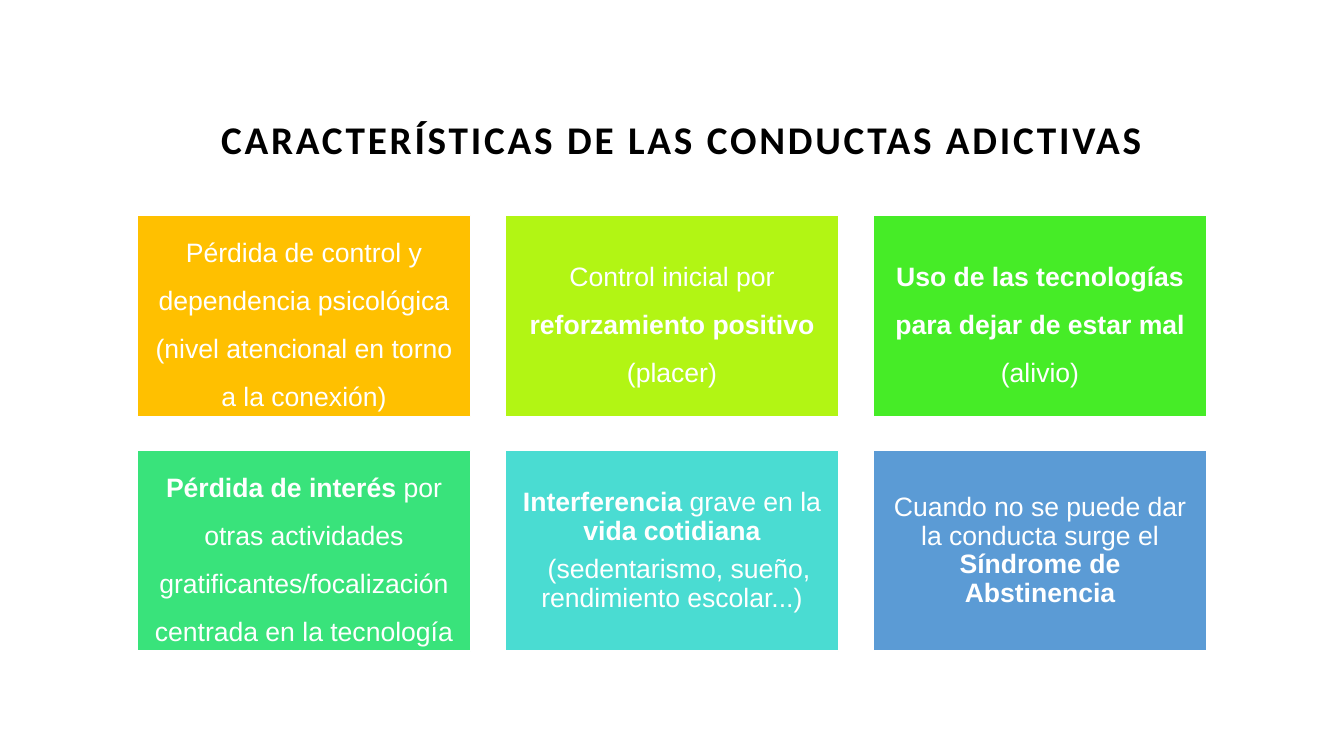
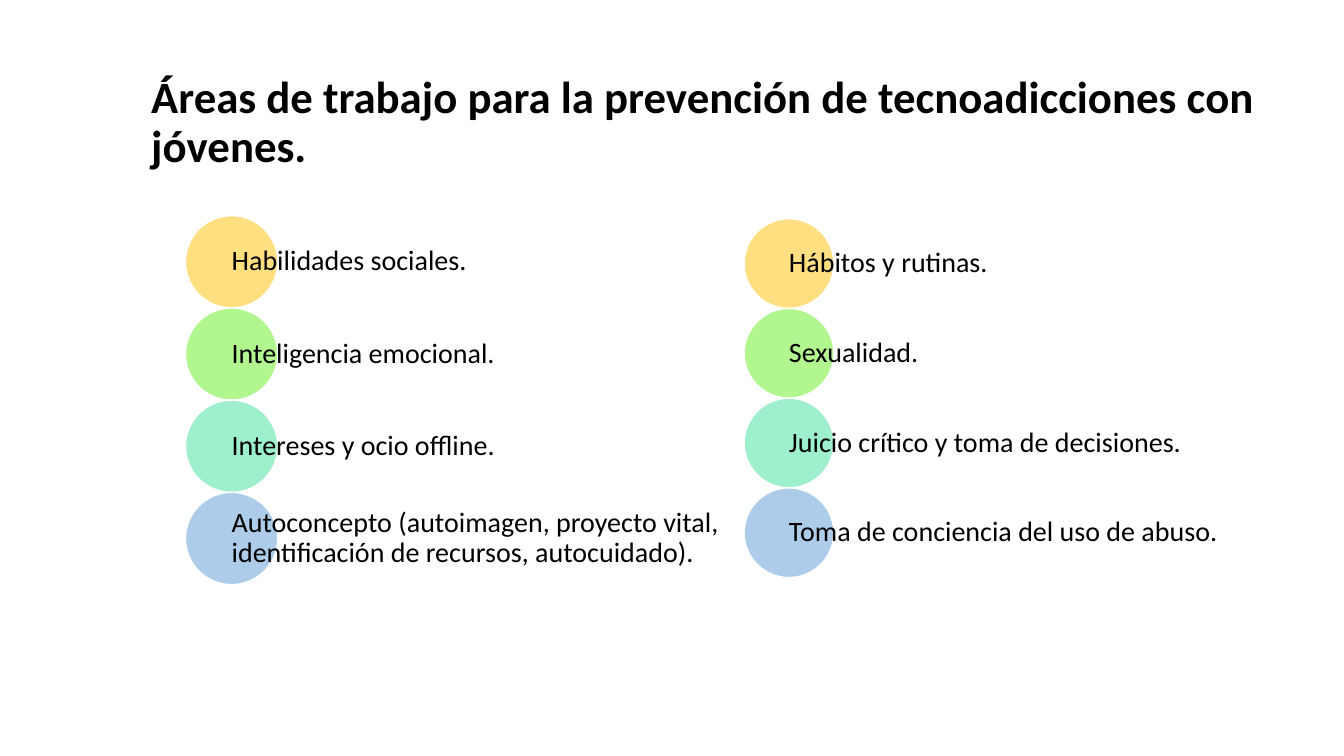
from dataclasses import dataclass

from lxml import etree
from pptx import Presentation
from pptx.dml import color
from pptx.enum import shapes, text
from pptx.oxml import ns
from pptx.util import Inches, Pt

COLORS = {
    "white": "FFFFFF", "black": "000000", "amber": "FFC000", "lime": "B2F514",
    "green": "46EC27", "emerald": "39E37B", "turquoise": "4ADCD2", "blue": "5B9BD5",
    "leaf": "67EF21", "mint": "3FE19B",
}
CENTER, LEFT = text.PP_ALIGN.CENTER, text.PP_ALIGN.LEFT


@dataclass(frozen=True)
class Run:
    words: str
    bold: bool = False


@dataclass(frozen=True)
class Card:
    fill: str
    paragraphs: list[list[Run]]
    spacing: float = 1.5
    last_indent: float = 0


@dataclass(frozen=True)
class AreaColumn:
    left: float
    top: float
    height: float
    label_width: float
    areas: list[str]


CARDS = [
    Card("amber", [[Run("Pérdida de control y dependencia psicológica "
                        "(nivel atencional en torno a la conexión)")]]),
    Card("lime", [[Run("Control inicial por "), Run("reforzamiento positivo ", True),
                   Run("(placer)")]]),
    Card("green", [[Run("Uso de las tecnologías para dejar de estar mal ", True),
                    Run("(alivio)")]]),
    Card("emerald", [[Run("Pérdida de interés ", True),
                      Run("por otras actividades gratificantes/focalización "
                          "centrada en la tecnología")]]),
    Card("turquoise", [[Run("Interferencia", True), Run(" grave en la "),
                        Run("vida cotidiana", True)],
                       [Run("(sedentarismo, sueño, rendimiento escolar...)")]],
         spacing=0.9, last_indent=0.14),
    Card("blue", [[Run("Cuando no se puede dar la conducta surge el "),
                   Run("Síndrome de Abstinencia", True)]], spacing=0.9),
]
AREA_COLORS = ["amber", "leaf", "mint", "blue"]
AREA_COLUMNS = [
    AreaColumn(1.84, 2.14, 3.66, 4.86, [
        "Habilidades sociales.", "Inteligencia emocional.", "Intereses y ocio offline.",
        "Autoconcepto (autoimagen, proyecto vital, identificación de recursos, autocuidado)."]),
    AreaColumn(7.38, 2.17, 3.56, 4.75, [
        "Hábitos y rutinas.", "Sexualidad.", "Juicio crítico y toma de decisiones.",
        "Toma de conciencia del uso de abuso."]),
]


def rgb(name: str) -> color.RGBColor:
    return color.RGBColor.from_string(COLORS[name])


def write(frame, paragraphs: list[list[Run]], *, size: float, font: str = "Calibri",
          ink: str = "black", align=LEFT, spacing: float = 0.9, after: float = 0,
          insets: tuple[float, float] = (0.1, 0.05), tracking: float = 0,
          last_indent: float = 0) -> None:
    """Fill a text frame; insets are (sides, top and bottom) in inches."""
    frame.word_wrap = True
    frame.auto_size = text.MSO_AUTO_SIZE.NONE
    frame.vertical_anchor = text.MSO_ANCHOR.MIDDLE
    frame.margin_left = frame.margin_right = Inches(insets[0])
    frame.margin_top = frame.margin_bottom = Inches(insets[1])
    for index, runs in enumerate(paragraphs):
        paragraph = frame.add_paragraph() if index else frame.paragraphs[0]
        paragraph.alignment = align
        paragraph.line_spacing = spacing
        paragraph.space_before, paragraph.space_after = Pt(0), Pt(after)
        for part in runs:
            run = paragraph.add_run()
            run.text = part.words
            run.font.name, run.font.size, run.font.bold = font, Pt(size), part.bold
            run.font.color.rgb = rgb(ink)
            if tracking:
                run.font._element.set("spc", str(int(tracking * 100)))
    if last_indent:
        paragraph._p.get_or_add_pPr().set("indent", str(Inches(last_indent)))


def add_panel(slide, kind, left: float, top: float, width: float, height: float,
              fill: str, alpha: int = 100):
    """Draw a filled shape with the shared white outline."""
    panel = slide.shapes.add_shape(kind, Inches(left), Inches(top),
                                   Inches(width), Inches(height))
    panel.shadow.inherit = False
    panel.fill.solid()
    panel.fill.fore_color.rgb = rgb(fill)
    panel.line.color.rgb = rgb("white")
    panel.line.width = Pt(1)
    if alpha < 100:
        tint = panel._element.spPr.find(ns.qn("a:solidFill"))[0]
        etree.SubElement(tint, ns.qn("a:alpha")).set("val", str(alpha * 1000))
    return panel


def add_titled_slide(deck, title: str, left: float, top: float, width: float,
                     height: float, **style):
    slide = deck.slides.add_slide(deck.slide_layouts[5])
    heading = slide.shapes.title
    heading.left, heading.top = Inches(left), Inches(top)
    heading.width, heading.height = Inches(width), Inches(height)
    write(heading.text_frame, [[Run(title, True)]], **style)
    return slide


def add_traits_slide(deck) -> None:
    slide = add_titled_slide(deck, "CARACTERÍSTICAS DE LAS CONDUCTAS ADICTIVAS ",
                             1.2, 1, 11.24, 0.82, size=28, align=CENTER,
                             insets=(0.2, 0.2), tracking=2)
    # Grid of three columns and two rows with equal gaps
    width, height, gap = 3.31, 1.99, 0.34
    for index, card in enumerate(CARDS):
        row, column = divmod(index, 3)
        panel = add_panel(slide, shapes.MSO_SHAPE.RECTANGLE, 1.36 + column * (width + gap),
                          2.14 + row * (height + gap), width, height, card.fill)
        write(panel.text_frame, card.paragraphs, size=19, font="Arial", ink="white",
              align=CENTER, spacing=card.spacing, after=6.65, insets=(0.08, 0.08),
              last_indent=card.last_indent)


def add_areas_slide(deck) -> None:
    slide = add_titled_slide(
        deck, "Áreas de trabajo para la prevención de tecnoadicciones con jóvenes.",
        1.4, 0.76, 11.5, 0.93, size=32)
    # Stacked circles; each label starts at its circle's centre
    for column in AREA_COLUMNS:
        diameter = column.height / len(column.areas)
        for index, (area, fill) in enumerate(zip(column.areas, AREA_COLORS)):
            top = column.top + index * diameter
            add_panel(slide, shapes.MSO_SHAPE.OVAL, column.left, top,
                      diameter, diameter, fill, alpha=50)
            label = slide.shapes.add_textbox(
                Inches(column.left + diameter / 2), Inches(top),
                Inches(column.label_width), Inches(diameter))
            write(label.text_frame, [[Run(area)]], size=20, after=7, insets=(0, 0.03))


def main() -> None:
    deck = Presentation()
    deck.slide_width, deck.slide_height = Inches(13.33), Inches(7.5)
    add_traits_slide(deck)
    add_areas_slide(deck)
    deck.save("out.pptx")


if __name__ == "__main__":
    main()
